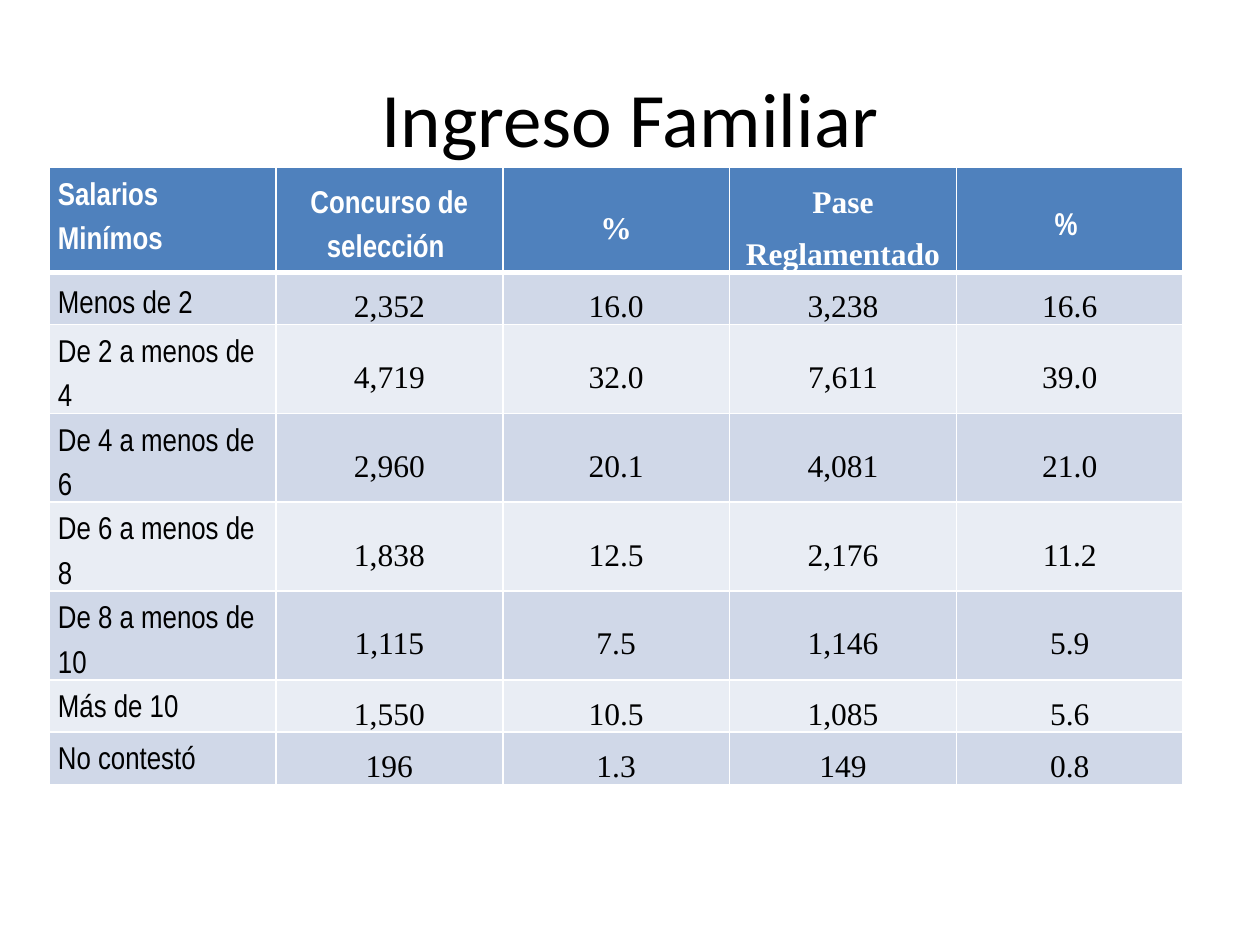
"""Build the slide on family income by admission route."""
import dataclasses

import lxml.etree
import pptx
import pptx.dml.color
import pptx.enum.text
import pptx.oxml.ns
import pptx.table
import pptx.util

Inches = pptx.util.Inches
Pt = pptx.util.Pt
ALIGN = pptx.enum.text.PP_ALIGN
ANCHOR = pptx.enum.text.MSO_ANCHOR
NARROW = "Arial Narrow"
SERIF = "Times New Roman"
WHITE = "FFFFFF"
BLACK = "000000"
HEADER_FILL = "4F81BD"
BAND_FILLS = ("D0D8E8", "E9EDF4")
HEADERS = ("Salarios Minímos", "Concurso de selección ", "%", "Pase Reglamentado", "% ")
HEADER_FONTS = (NARROW, NARROW, SERIF, SERIF, NARROW)


@dataclasses.dataclass(frozen=True)
class IncomeRow:
    values: tuple[str, ...]
    anchor: ANCHOR = ANCHOR.MIDDLE


@dataclasses.dataclass(frozen=True)
class CellStyle:
    font: str
    color: str
    fill: str
    bold: bool
    align: ALIGN
    anchor: ANCHOR
    top: float
    bottom: float


INCOME_ROWS = (
    IncomeRow(("Menos de 2", "2,352", "16.0", "3,238", "16.6")),
    IncomeRow(("De 2 a menos de 4", "4,719", "32.0", "7,611", "39.0")),
    IncomeRow(("De 4 a menos de 6", "2,960", "20.1", "4,081", "21.0")),
    IncomeRow(("De 6 a menos de 8", "1,838", "12.5", "2,176", "11.2")),
    IncomeRow(("De 8 a menos de 10", "1,115", "7.5", "1,146", "5.9")),
    IncomeRow(("Más de 10", "1,550", "10.5", "1,085", "5.6"), ANCHOR.TOP),
    IncomeRow(("No contestó", "196", "1.3", "149", "0.8"), ANCHOR.TOP),
)


def rgb(color: str) -> pptx.dml.color.RGBColor:
    return pptx.dml.color.RGBColor.from_string(color)


def set_borders(cell: pptx.table._Cell, top: float, bottom: float) -> None:
    qn = pptx.oxml.ns.qn
    tcPr = cell._tc.get_or_add_tcPr()
    for tag, width in (("a:lnL", 1), ("a:lnR", 1), ("a:lnT", top), ("a:lnB", bottom)):
        ln = lxml.etree.SubElement(tcPr, qn(tag), w=str(Pt(width)))
        fill = lxml.etree.SubElement(ln, qn("a:solidFill"))
        lxml.etree.SubElement(fill, qn("a:srgbClr"), val=WHITE)


def fill_cell(cell: pptx.table._Cell, text: str, style: CellStyle) -> None:
    set_borders(cell, style.top, style.bottom)
    cell.fill.solid()
    cell.fill.fore_color.rgb = rgb(style.fill)
    cell.margin_left = cell.margin_right = Inches(0.07)
    cell.margin_top = cell.margin_bottom = 0
    cell.vertical_anchor = style.anchor
    cell.text_frame.text = text
    p = cell.text_frame.paragraphs[0]
    p.alignment = style.align
    p.line_spacing = 1.5
    font = p.runs[0].font
    font.name = style.font
    font.size = Pt(18)
    font.bold = style.bold
    font.color.rgb = rgb(style.color)


def add_title(s: pptx.slide.Slide, text: str) -> None:
    sp = s.shapes.title
    sp.left, sp.top, sp.width, sp.height = (Inches(v) for v in (0.5, 0.3, 9, 1.25))
    tf = sp.text_frame
    tf.text = text
    tf.vertical_anchor = ANCHOR.MIDDLE
    p = tf.paragraphs[0]
    p.alignment = ALIGN.CENTER
    font = p.runs[0].font
    font.name = "Calibri"
    font.size = Pt(44)
    font.color.rgb = rgb(BLACK)


def add_income_table(s: pptx.slide.Slide) -> None:
    count = len(INCOME_ROWS) + 1
    table = s.shapes.add_table(
        count, len(HEADERS), Inches(0.39), Inches(1.33), Inches(9), Inches(0.41 * count)
    ).table
    for col, text in enumerate(HEADERS):
        first = col == 0
        align = ALIGN.LEFT if first else ALIGN.CENTER
        anchor = ANCHOR.TOP if first else ANCHOR.MIDDLE
        header = CellStyle(HEADER_FONTS[col], WHITE, HEADER_FILL, True, align, anchor, 1, 3)
        fill_cell(table.cell(0, col), text, header)
        for i, row in enumerate(INCOME_ROWS):
            body = CellStyle(NARROW if first else SERIF, BLACK, BAND_FILLS[i % 2], False,
                             align, row.anchor, 3 if i == 0 else 1, 1)
            fill_cell(table.cell(i + 1, col), row.values[col], body)


def main() -> None:
    prs = pptx.Presentation()
    prs.slide_width, prs.slide_height = Inches(10), Inches(7.5)
    s = prs.slides.add_slide(prs.slide_layouts[5])
    add_title(s, "Ingreso Familiar")
    add_income_table(s)
    prs.save("out.pptx")


if __name__ == "__main__":
    main()
